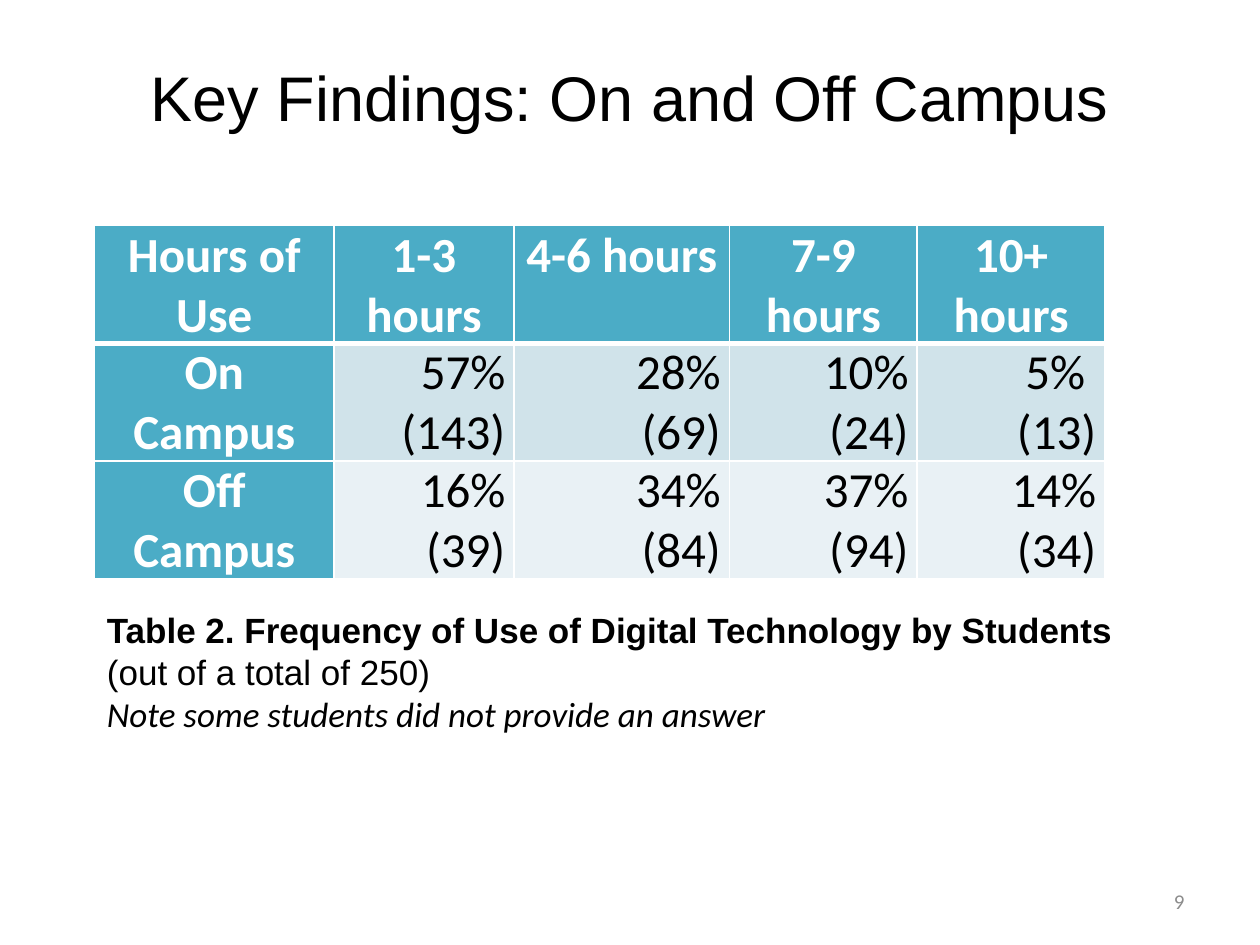
from lxml import etree
from pptx import Presentation, util as u
from pptx.dml.color import RGBColor
from pptx.enum import text
from pptx.oxml.ns import qn

WIDTH, HEIGHT = 10, 7.5
MARGIN = 0.05 * WIDTH
TABLE_LEFT, TABLE_TOP = 0.75, 1.79
COL_WIDTHS = [1.9, 1.43, 1.71, 1.49, 1.49]
ROW_HEIGHTS = [0.88, 0.93, 0.88]

WHITE, BLACK, GREY, TEAL = "FFFFFF", "000000", "8C8C8C", "4BACC6"
BANDS = ["D0E3EA", "E9F1F5"]

TITLE = "Key Findings: On and Off Campus"
PAGE = "9"
ROWS = [
    ["Hours of Use", "1-3 hours", "4-6 hours", "7-9 hours", "10+ hours"],
    ["On Campus", "57% (143)", "28%\n(69)", "10% (24)", "5% \n(13)"],
    ["Off Campus", "16% (39)", "34%\n(84)", "37%\n(94)", "14%\n(34)"],
]
CAPTION = [  # text, font, bold, italic
    ("Table 2. Frequency of Use of Digital Technology by Students", "Arial", True, False),
    ("(out of a total of 250)", "Arial", False, False),
    ("Note some students did not provide an answer", "Calibri", False, True),
]
LEFT, CENTER, RIGHT = text.PP_ALIGN.LEFT, text.PP_ALIGN.CENTER, text.PP_ALIGN.RIGHT
TOP, MIDDLE = text.MSO_ANCHOR.TOP, text.MSO_ANCHOR.MIDDLE


def rgb(value):
    return RGBColor.from_string(value)


def style(p, size, name, color, align=LEFT, bold=False, italic=False):
    p.alignment = align
    f = p.font
    f.size, f.name, f.bold, f.italic = u.Pt(size), name, bold, italic
    f.color.rgb = rgb(color)


def add_text(s, box, content, anchor=MIDDLE):
    """Add a wrapping text box and return its paragraphs."""
    tf = s.shapes.add_textbox(*map(u.Inches, box)).text_frame
    tf.word_wrap = True
    tf.vertical_anchor = anchor
    tf.text = content
    return tf.paragraphs


def set_borders(cell, top, bottom):
    """Draw white borders; top and bottom widths are in points."""
    tc_pr = cell._tc.get_or_add_tcPr()
    for side, width in zip("LRTB", (1, 1, top, bottom)):
        ln = etree.SubElement(tc_pr, qn(f"a:ln{side}"), w=str(u.Pt(width)))
        fill = etree.SubElement(ln, qn("a:solidFill"))
        etree.SubElement(fill, qn("a:srgbClr"), val=WHITE)


def fill_cell(cell, content, row, col):
    heading = row == 0 or col == 0
    cell.margin_left = cell.margin_right = u.Inches(0.07)
    cell.margin_top = cell.margin_bottom = 0
    set_borders(cell, 3 if row == 1 else 1, 3 if row == 0 else 1)
    cell.fill.solid()
    cell.fill.fore_color.rgb = rgb(TEAL if heading else BANDS[row - 1])
    cell.text = content
    for p in cell.text_frame.paragraphs:
        style(p, 28, "Calibri", WHITE if heading else BLACK,
              CENTER if heading else RIGHT, heading)


def add_hours_table(s):
    table = s.shapes.add_table(
        len(ROWS), len(COL_WIDTHS), u.Inches(TABLE_LEFT), u.Inches(TABLE_TOP),
        u.Inches(sum(COL_WIDTHS)), u.Inches(sum(ROW_HEIGHTS))).table
    for column, width in zip(table.columns, COL_WIDTHS):
        column.width = u.Inches(width)
    for row, height in zip(table.rows, ROW_HEIGHTS):
        row.height = u.Inches(height)
    for i, row in enumerate(ROWS):
        for j, content in enumerate(row):
            fill_cell(table.cell(i, j), content, i, j)


def main():
    prs = Presentation()
    prs.slide_width, prs.slide_height = u.Inches(WIDTH), u.Inches(HEIGHT)
    s = prs.slides.add_slide(prs.slide_layouts[6])

    title = add_text(s, (MARGIN, 0.3, WIDTH - 2 * MARGIN, 0.93), TITLE)
    style(title[0], 36, "Arial", BLACK, CENTER)

    add_hours_table(s)

    lines = "\n".join(line for line, *_ in CAPTION)
    caption = add_text(s, (TABLE_LEFT, 4.78, 8.59, 1.45), lines, TOP)
    for p, (_, name, bold, italic) in zip(caption, CAPTION):
        style(p, 20, name, BLACK, LEFT, bold, italic)

    page = add_text(s, (WIDTH - MARGIN - 2.33, 6.95, 2.33, 0.4), PAGE)
    style(page[0], 12, "Calibri", GREY, RIGHT)

    prs.save("out.pptx")


if __name__ == "__main__":
    main()
